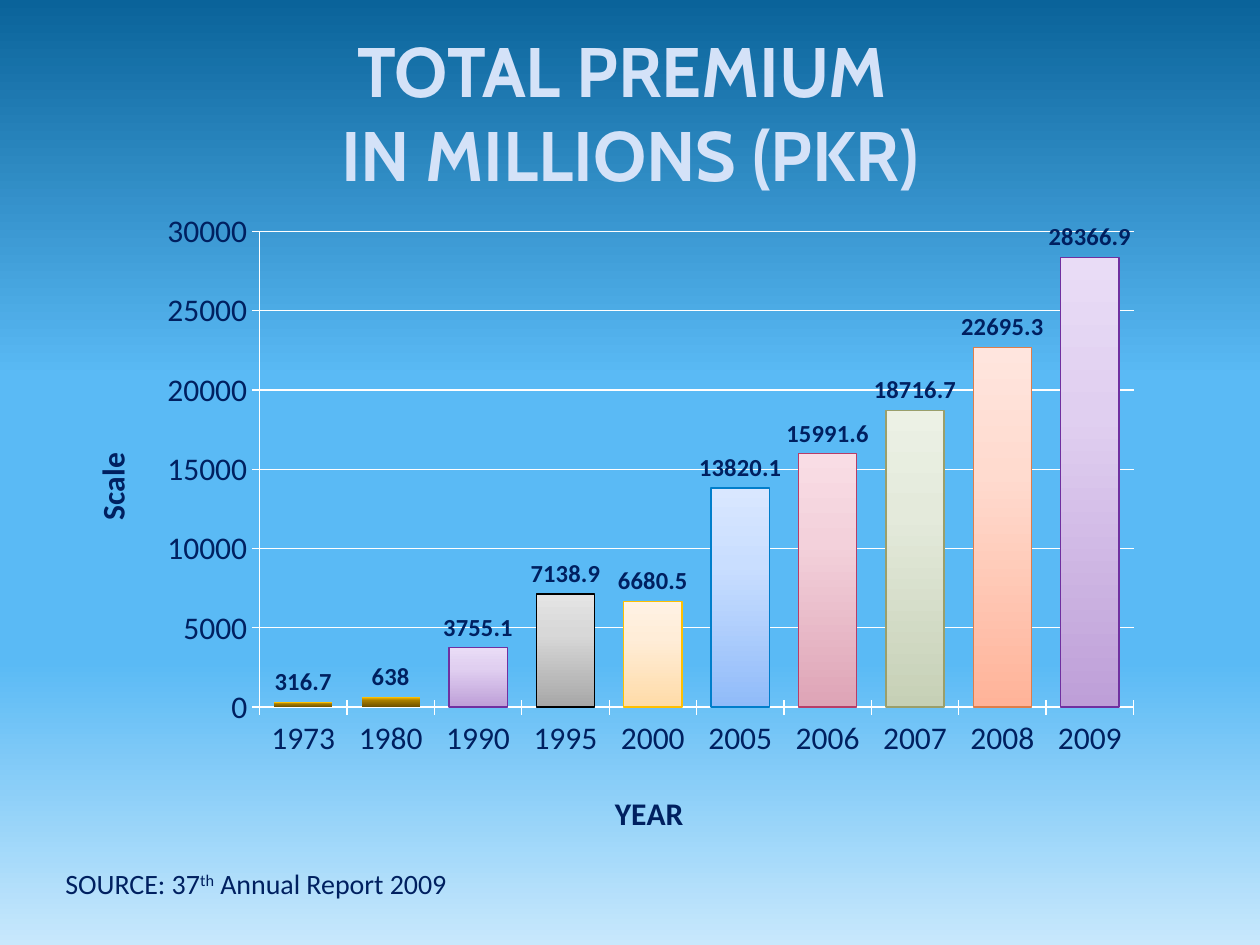
"""Build the total premium column chart slide."""
from dataclasses import dataclass

from lxml import etree
from pptx import Presentation
from pptx import util as u
from pptx.chart import data
from pptx.dml import color
from pptx.enum import chart as kinds
from pptx.enum import text
from pptx.oxml import ns


@dataclass(frozen=True)
class Theme:
    head: str = "Cabin"
    body: str = "Calibri"
    pale: str = "D4E2F8"
    navy: str = "002060"
    white: str = "FFFFFF"
    gold: str = "FFC000"
    big: int = 40
    mid: int = 18
    note: int = 16
    small: int = 14
    sky: tuple = ((0, "0A639A"), (40, "5ABAF5"), (70, "5ABAF5"), (100, "C8E8FC"))


YEARS = ("1973", "1980", "1990", "1995", "2000", "2005", "2006", "2007", "2008", "2009")
SUMS = (316.7, 638, 3755.1, 7138.9, 6680.5, 13820.1, 15991.6, 18716.7, 22695.3, 28366.9)
DARK = ("6B5000", "A87E00", "FFC000", None)
PLUM = ("BE9FD8", "E0CFF0", "E9DCF6", "7030A0")
TINTS = (
    DARK,
    DARK,
    PLUM,
    ("A7A7A7", "D8D8D8", "E4E4E4", "000000"),
    ("FFDBA7", "FFEDD8", "FFF2E4", "FFC000"),
    ("90BBF9", "C9DEFF", "D9E7FF", "007ECB"),
    ("DEA4B6", "F3D1DB", "F9DDE5", "B83D68"),
    ("C6D0B6", "E4EADB", "ECF1E5", "9A9F6B"),
    ("FFB399", "FFDBCF", "FFE5DE", "DE7E4A"),
    PLUM,
)


def rgb(code):
    return color.RGBColor.from_string(code)


def style(font, size, tint, face, bold=False):
    font.size, font.bold, font.name = u.Pt(size), bold, face
    font.color.rgb = rgb(tint)


def say(para, words, raised=False, **fmt):
    for i, line in enumerate(words.split("\n")):
        if i:
            para.add_line_break()
        run = para.add_run()
        run.text = line
        style(run.font, **fmt)
        if raised:
            run._r.get_or_add_rPr().set("baseline", "30000")


def blend(fill, root, stops, angle):
    fill.gradient()
    fill.gradient_angle = angle
    bands = root.xpath(".//a:gradFill/a:gsLst")[-1]
    for stop in list(bands):
        bands.remove(stop)
    for place, code in stops:
        stop = etree.SubElement(bands, ns.qn("a:gs"), pos=str(place * 1000))
        etree.SubElement(stop, ns.qn("a:srgbClr"), val=code)


def pin(part, **spots):
    for old in part.findall(ns.qn("c:layout")):
        part.remove(old)
    box = etree.Element(ns.qn("c:layout"))
    man = etree.SubElement(box, ns.qn("c:manualLayout"))
    for name, val in spots.items():
        etree.SubElement(man, ns.qn("c:" + name), val=str(val))
    text_part = part.find(ns.qn("c:tx"))
    part.insert(0 if text_part is None else 1, box)


class Deck:
    def __init__(self, theme):
        self.theme = theme
        self.file = Presentation()
        self.file.slide_width, self.file.slide_height = u.Pt(720), u.Pt(540)
        self.slide = self.file.slides.add_slide(self.file.slide_layouts[5])
        blend(self.slide.background.fill, self.slide.element, theme.sky, 270)

    def title(self, words, left, top, width, height):
        box = self.slide.shapes.title
        box.left, box.top = u.Pt(left), u.Pt(top)
        box.width, box.height = u.Pt(width), u.Pt(height)
        frame = box.text_frame
        frame.auto_size = text.MSO_AUTO_SIZE.SHAPE_TO_FIT_TEXT
        frame.vertical_anchor = text.MSO_ANCHOR.TOP
        para = frame.paragraphs[0]
        para.alignment = text.PP_ALIGN.CENTER
        t = self.theme
        say(para, words, size=t.big, tint=t.pale, face=t.head, bold=True)

    def note(self, parts, left, top, width, height):
        box = self.slide.shapes.add_textbox(u.Pt(left), u.Pt(top), u.Pt(width), u.Pt(height))
        frame = box.text_frame
        frame.word_wrap = True
        frame.auto_size = text.MSO_AUTO_SIZE.SHAPE_TO_FIT_TEXT
        t = self.theme
        for words, raised in parts:
            say(frame.paragraphs[0], words, raised, size=t.note, tint=t.navy, face=t.body)

    def axis(self, axis, name, x, y):
        t = self.theme
        axis.major_tick_mark = kinds.XL_TICK_MARK.CROSS
        axis.format.line.color.rgb = rgb(t.white)
        axis.format.line.width = u.Pt(0.75)
        style(axis.tick_labels.font, t.mid, t.navy, t.body)
        head = axis.axis_title
        say(head.text_frame.paragraphs[0], name, size=t.mid, tint=t.navy, face=t.body, bold=True)
        pin(head._element, xMode="edge", yMode="edge", x=x, y=y)

    def bars(self, left, top, width, height):
        t = self.theme
        info = data.CategoryChartData()
        info.categories = YEARS
        info.add_series("Series 1", SUMS)
        chart = self.slide.shapes.add_chart(
            kinds.XL_CHART_TYPE.COLUMN_CLUSTERED,
            u.Pt(left), u.Pt(top), u.Pt(width), u.Pt(height), info).chart
        chart.has_legend = chart.has_title = False
        style(chart.font, t.mid, t.white, t.body)
        self.axis(chart.category_axis, "YEAR", 0.5, 0.9)
        scale = chart.value_axis
        self.axis(scale, "Scale ", 0.02, 0.37)
        scale.minimum_scale, scale.maximum_scale, scale.major_unit = 0, 30000, 5000
        scale.major_gridlines.format.line.color.rgb = rgb(t.white)
        scale.major_gridlines.format.line.width = u.Pt(0.75)
        pin(chart.element.xpath(".//c:plotArea")[0], layoutTarget="inner",
            xMode="edge", yMode="edge", x=0.18, y=0.05, w=0.8, h=0.73)
        plot = chart.plots[0]
        plot.gap_width, plot.vary_by_categories = 50, False
        self.tint(chart, plot.series[0])
        plot.has_data_labels = True
        tags = plot.data_labels
        tags.show_value = True
        tags.position = kinds.XL_LABEL_POSITION.OUTSIDE_END
        style(tags.font, t.small, t.navy, t.body, True)

    def tint(self, chart, row):
        row.format.fill.solid()
        row.format.fill.fore_color.rgb = rgb(self.theme.gold)
        for i, (low, mid, high, edge) in enumerate(TINTS):
            form = row.points[i].format
            blend(form.fill, chart.element, ((0, low), (65, mid), (100, high)), 90)
            if edge:
                form.line.color.rgb = rgb(edge)
                form.line.width = u.Pt(0.75)
            else:
                form.line.fill.background()

    def save(self):
        self.file.save("out.pptx")


def main():
    deck = Deck(Theme())
    deck.bars(36, 113.76, 624.24, 372.24)
    deck.title("TOTAL PREMIUM \nIN MILLIONS (PKR)", 0, 12.24, 720, 152.64)
    deck.note((("SOURCE: 37", False), ("th", True), (" Annual Report 2009", False)),
              30.24, 491.76, 282.24, 26.64)
    deck.save()


if __name__ == "__main__":
    main()
